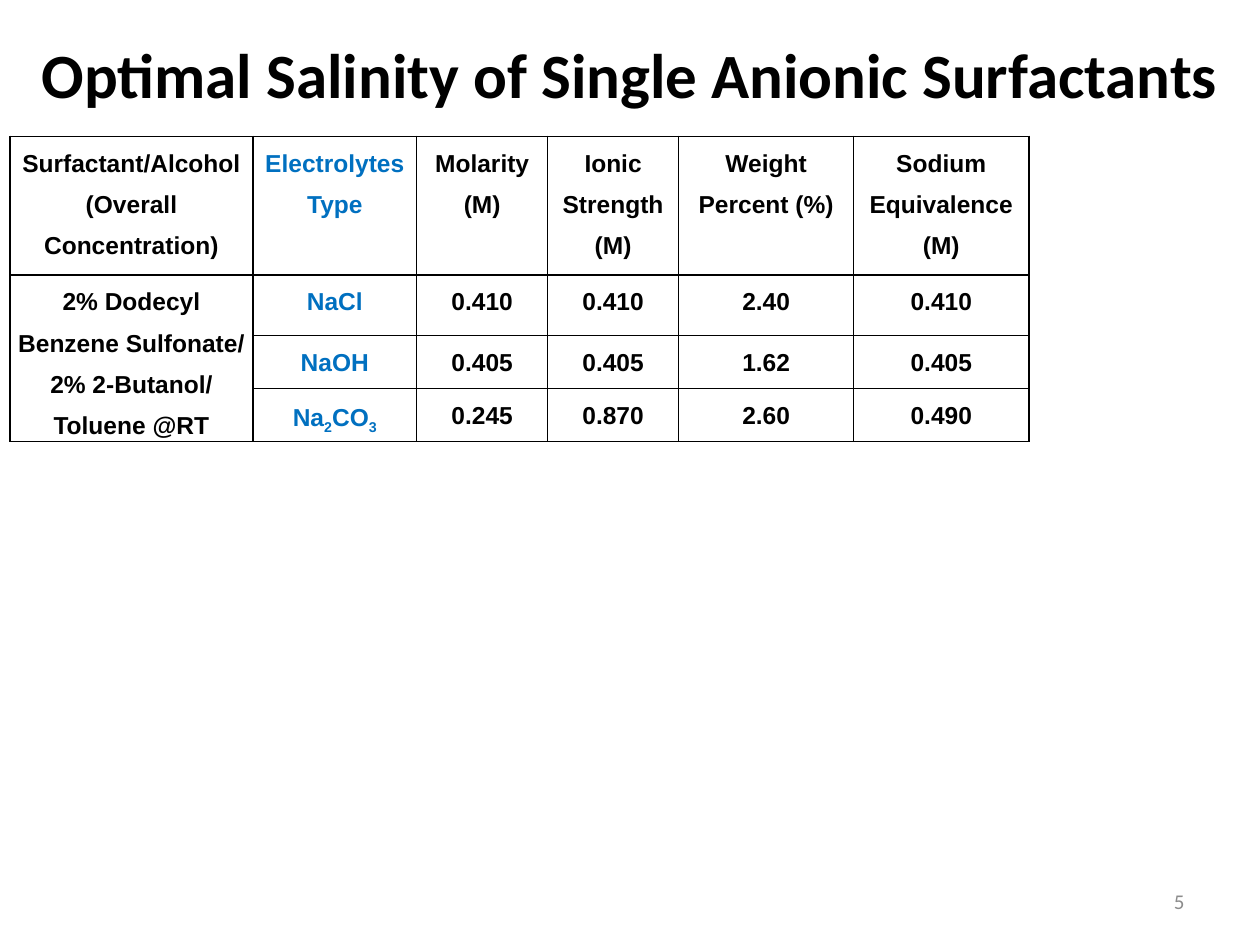
"""Build the slide on the optimal salinity of single anionic surfactants."""
from dataclasses import dataclass

from lxml.etree import SubElement
from pptx import Presentation
from pptx.dml.color import RGBColor
from pptx.enum.text import MSO_ANCHOR, PP_ALIGN
from pptx.oxml.ns import qn
from pptx.util import Cm, Pt

BLACK = "000000"
BLUE = "0070C0"
GREY = "8C8C8C"
COLUMN_WIDTHS = (4.9, 3.3, 2.64, 2.64, 3.53, 3.53)
ROW_HEIGHTS = (2.79, 1.22, 1.07, 1.07)
HEADERS = (
    "Surfactant/Alcohol (Overall Concentration)",
    "Electrolytes Type",
    "Molarity (M)",
    "Ionic Strength (M)",
    "Weight Percent (%)",
    "Sodium Equivalence (M)",
)
SURFACTANT = "2% Dodecyl Benzene Sulfonate/ 2% 2-Butanol/ Toluene @RT"


@dataclass(frozen=True)
class Electrolyte:
    formula: str
    molarity: str
    ionic_strength: str
    weight_percent: str
    sodium_equivalence: str

    def texts(self) -> tuple[str, ...]:
        return (self.formula, self.molarity, self.ionic_strength,
                self.weight_percent, self.sodium_equivalence)


ELECTROLYTES = (
    Electrolyte("NaCl", "0.410", "0.410", "2.40", "0.410"),
    Electrolyte("NaOH", "0.405", "0.405", "1.62", "0.405"),
    Electrolyte("Na2CO3", "0.245", "0.870", "2.60", "0.490"),
)


def format_paragraph(paragraph, alignment, font_name: str, size: int,
                     color: str, bold: bool) -> None:
    paragraph.alignment = alignment
    font = paragraph.font
    font.name, font.size, font.bold = font_name, Pt(size), bold
    font.color.rgb = RGBColor.from_string(color)


def add_formula(paragraph, formula: str) -> None:
    parts = formula.replace("2", "|2|").replace("3", "|3|").split("|")
    for part in filter(None, parts):
        run = paragraph.add_run()
        run.text = part
        if part.isdigit():
            run._r.get_or_add_rPr().set("baseline", "-25000")


def style_cell(cell) -> None:
    cell.margin_left = cell.margin_right = Cm(0.1)
    cell.margin_top = cell.margin_bottom = 0
    properties = cell._tc.get_or_add_tcPr()
    for side in ("a:lnL", "a:lnR", "a:lnT", "a:lnB"):
        line = SubElement(properties, qn(side), w=str(Pt(1)))
        SubElement(SubElement(line, qn("a:solidFill")), qn("a:srgbClr"), val=BLACK)
    cell.fill.background()


def write_cell(cell, text: str, color: str, is_formula: bool = False) -> None:
    paragraph = cell.text_frame.paragraphs[0]
    format_paragraph(paragraph, PP_ALIGN.CENTER, "Arial", 14, color, True)
    paragraph.line_spacing = 1.5
    paragraph.space_after = Pt(10)
    if is_formula:
        add_formula(paragraph, text)
    else:
        paragraph.add_run().text = text


def add_title(slide) -> None:
    title = slide.shapes.title
    title.left, title.top, title.width, title.height = 0, 0, Cm(25.4), Cm(2.97)
    title.text_frame.text = "Optimal Salinity of Single Anionic Surfactants"
    title.text_frame.vertical_anchor = MSO_ANCHOR.MIDDLE
    format_paragraph(title.text_frame.paragraphs[0], PP_ALIGN.CENTER,
                     "Calibri", 36, BLACK, True)


def add_salinity_table(slide) -> None:
    table = slide.shapes.add_table(
        len(ROW_HEIGHTS), len(COLUMN_WIDTHS), Cm(0.2), Cm(2.75),
        Cm(sum(COLUMN_WIDTHS)), Cm(sum(ROW_HEIGHTS))).table
    table.first_row = table.horz_banding = False
    for column, width in zip(table.columns, COLUMN_WIDTHS):
        column.width = Cm(width)
    for row, height in zip(table.rows, ROW_HEIGHTS):
        row.height = Cm(height)
    for cell in table.iter_cells():
        style_cell(cell)
    table.cell(1, 0).merge(table.cell(3, 0))
    for column, header in enumerate(HEADERS):
        write_cell(table.cell(0, column), header, BLUE if column == 1 else BLACK)
    write_cell(table.cell(1, 0), SURFACTANT, BLACK)
    for row, electrolyte in enumerate(ELECTROLYTES, start=1):
        for column, text in enumerate(electrolyte.texts(), start=1):
            is_formula = column == 1
            write_cell(table.cell(row, column), text,
                       BLUE if is_formula else BLACK, is_formula)


def add_page_number(slide) -> None:
    box = slide.shapes.add_textbox(Cm(18.2), Cm(17.65), Cm(5.93), Cm(1.02))
    frame = box.text_frame
    frame.word_wrap = True
    frame.vertical_anchor = MSO_ANCHOR.MIDDLE
    frame.text = "5"
    format_paragraph(frame.paragraphs[0], PP_ALIGN.RIGHT, "Calibri", 12, GREY, False)


def main() -> None:
    presentation = Presentation()
    presentation.slide_width, presentation.slide_height = Cm(25.4), Cm(19.05)
    slide = presentation.slides.add_slide(presentation.slide_layouts[5])
    add_title(slide)
    add_salinity_table(slide)
    add_page_number(slide)
    presentation.save("out.pptx")


if __name__ == "__main__":
    main()
